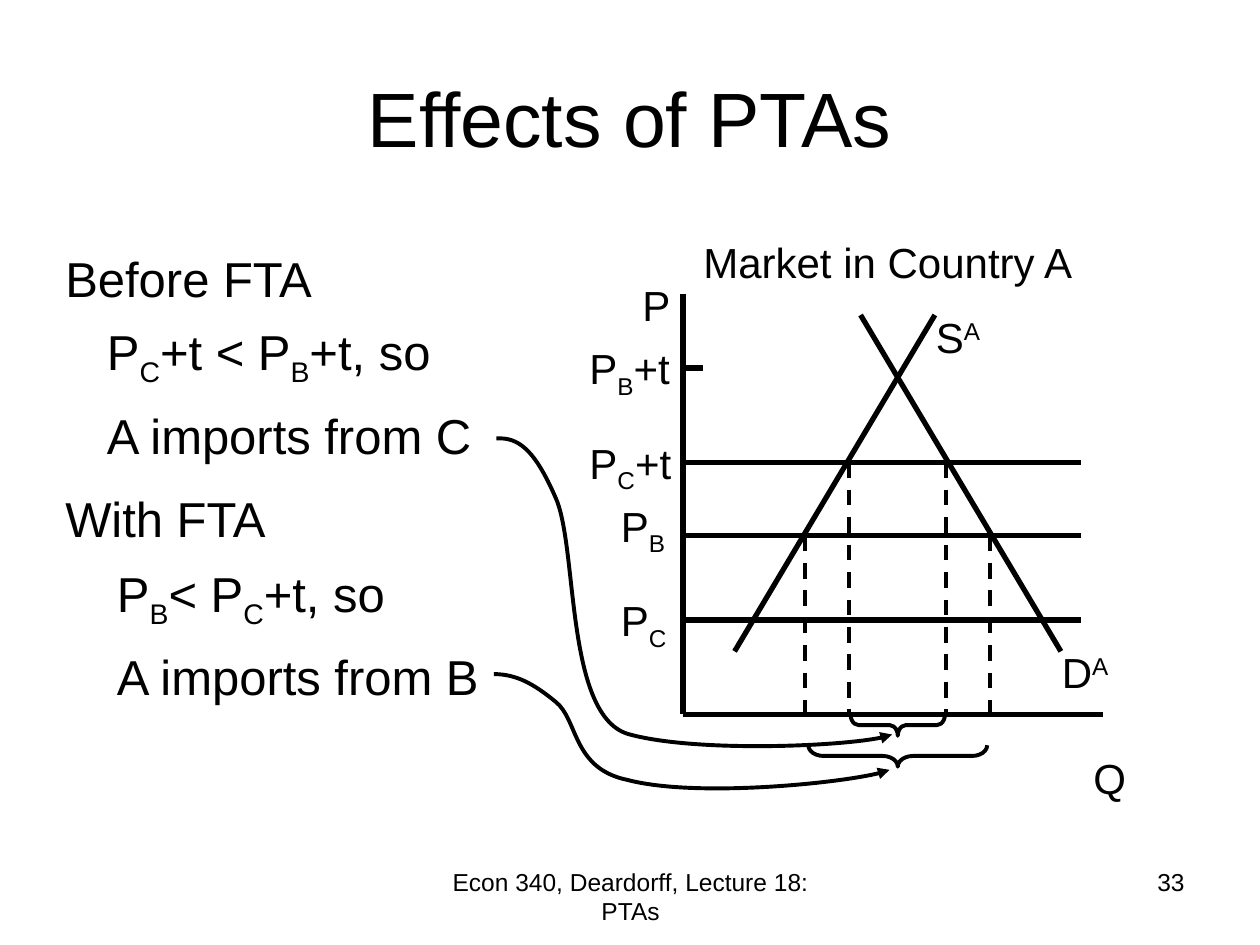
from lxml import etree
from pptx import Presentation
from pptx.dml.color import RGBColor
from pptx.enum.dml import MSO_LINE
from pptx.enum.shapes import MSO_CONNECTOR, MSO_SHAPE
from pptx.enum.text import MSO_ANCHOR, PP_ALIGN as Align
from pptx.oxml.ns import qn
from pptx.util import Inches, Pt

BLACK = RGBColor(0, 0, 0)
WHITE = RGBColor(255, 255, 255)
SUB, SUPER = -25000, 30000

deck = Presentation()
deck.slide_width, deck.slide_height = Inches(10), Inches(7.5)
page = deck.slides.add_slide(deck.slide_layouts[5])
page.background.fill.solid()
page.background.fill.fore_color.rgb = WHITE


def write(frame, text, size, align=Align.LEFT, shift=SUB):
    """Fill a text frame; parts between bars are lowered or raised."""
    frame.word_wrap = True
    para = frame.paragraphs[0]
    para.alignment = align
    for index, part in enumerate(text.split("|")):
        if not part:
            continue
        span = para.add_run()
        span.text = part
        for name, value in {"name": "Arial", "size": Pt(size)}.items():
            setattr(span.font, name, value)
        span.font.color.rgb = BLACK
        if index % 2:
            span.font._element.set("baseline", str(shift))


def add_line(x1, y1, x2, y2, width=3, dash=None):
    line = page.shapes.add_connector(
        MSO_CONNECTOR.STRAIGHT, Inches(x1), Inches(y1), Inches(x2), Inches(y2))
    for name, value in {"width": Pt(width), "dash_style": dash}.items():
        setattr(line.line, name, value)
    line.line.color.rgb = BLACK
    etree.SubElement(line._element.spPr, qn("a:effectLst"))


# Title
title = page.shapes.title
title.left, title.top = Inches(0.5), Inches(0.3)
title.width, title.height = Inches(9), Inches(1.25)
title.text_frame.vertical_anchor = MSO_ANCHOR.MIDDLE
write(title.text_frame, "Effects of PTAs", 44, Align.CENTER)

# Axes, supply and demand
AXIS_X, AXIS_Y = 5.42, 5.67
add_line(AXIS_X, 2.33, AXIS_X, AXIS_Y)
add_line(8.75, AXIS_Y, AXIS_X, AXIS_Y)
add_line(7.42, 2.5, 5.83, 5.17)
add_line(6.83, 2.5, 8.42, 5.17)

# Price lines and ticks
PB_TARIFF, PC_TARIFF, PB, PC = 2.92, 3.67, 4.25, 4.92
for price in (PC, PB, PC_TARIFF):
    add_line(8.58, price, AXIS_X, price)
for price in (PB_TARIFF, PB, PC_TARIFF):
    add_line(5.58, price, AXIS_X, price)

# Quantities supplied and demanded at each import price
for price, quantities in ((PC_TARIFF, (6.74, 7.51)), (PB, (6.39, 7.86))):
    for quantity in quantities:
        add_line(quantity, price, quantity, AXIS_Y, 2.25, MSO_LINE.DASH)

# Text: left, top, width, height, size, alignment, shift, wording
texts = [
    (3.42, 6.83, 3.17, 0.52, 14, Align.CENTER, SUB,
     "Econ 340, Deardorff, Lecture 18: PTAs"),
    (7.17, 6.83, 2.33, 0.52, 14, Align.RIGHT, SUB, "33"),
    (5.42, 1.83, 3.25, 0.5, 24, Align.CENTER, SUB, "Market in Country A"),
]
for left, top, shift, label in (
        (8.58, 5.92, SUB, "Q"), (5, 2.17, SUB, "P"),
        (4.58, 2.67, SUB, "P|B|+t"), (4.58, 3.42, SUB, "P|C|+t"),
        (4.83, 3.92, SUB, "P|B|"), (4.83, 4.67, SUB, "P|C|"),
        (7.33, 2.42, SUPER, "S|A|"), (8.33, 5.08, SUPER, "D|A|")):
    texts.append((left, top, 1, 0.5, 24, Align.LEFT, shift, label))
for left, top, words in (
        (0.42, 1.92, "Before FTA"), (0.75, 2.5, "P|C|+t < P|B|+t, so"),
        (0.75, 3.17, "A imports from C"), (0.42, 3.83, "With FTA"),
        (0.83, 4.42, "P|B|< P|C|+t, so"), (0.83, 5.08, "A imports from B")):
    texts.append((left, top, 3.25, 0.57, 28, Align.LEFT, SUB, words))
for left, top, width, height, size, align, shift, words in texts:
    box = page.shapes.add_textbox(
        Inches(left), Inches(top), Inches(width), Inches(height))
    write(box.text_frame, words, size, align, shift)

# Braces marking the imports, turned to open upwards
outlines = []
for top, length, bend in ((5.38, 0.75, 0.375), (5.29, 1.42, 0.708)):
    brace = page.shapes.add_shape(
        MSO_SHAPE.RIGHT_BRACE, Inches(7.04), Inches(top), Inches(0.17), Inches(length))
    brace.rotation = 90
    brace.adjustments[0] = bend
    outlines.append(brace)

# Curved arrows from the statements to the braces: start, then Bezier triples
arrows = [
    [(3.94, 3.48), (4.11, 3.47), (4.24, 3.56), (4.41, 3.95), (4.59, 4.35),
     (4.48, 5.7), (5, 5.83), (5.52, 5.97), (6.89, 5.92), (7.08, 5.83)],
    [(3.92, 5.35), (4.1, 5.35), (4.24, 5.43), (4.41, 5.57), (4.59, 5.71),
     (4.54, 6.1), (4.98, 6.19), (5.51, 6.33), (6.87, 6.2), (7.06, 6.11)],
]
for points in arrows:
    start, *rest = [(Inches(x), Inches(y)) for x, y in points]
    builder = page.shapes.build_freeform(*start)
    builder.add_line_segments(rest, close=False)
    arrow = builder.convert_to_shape()
    # Turn every three straight segments into one curve
    track = arrow._element.xpath(".//a:path")[0]
    segments = track.findall(qn("a:lnTo"))
    for first in range(0, len(segments), 3):
        curve = etree.SubElement(track, qn("a:cubicBezTo"))
        for segment in segments[first:first + 3]:
            curve.append(segment[0])
            track.remove(segment)
    arrow.line.width = Pt(2.25)
    etree.SubElement(arrow.line._get_or_add_ln(), qn("a:tailEnd"), type="triangle")
    outlines.append(arrow)

for shape in outlines:
    shape.shadow.inherit = False
    shape.fill.background()
    shape.line.width = Pt(2.25)
    shape.line.color.rgb = BLACK

deck.save("out.pptx")
